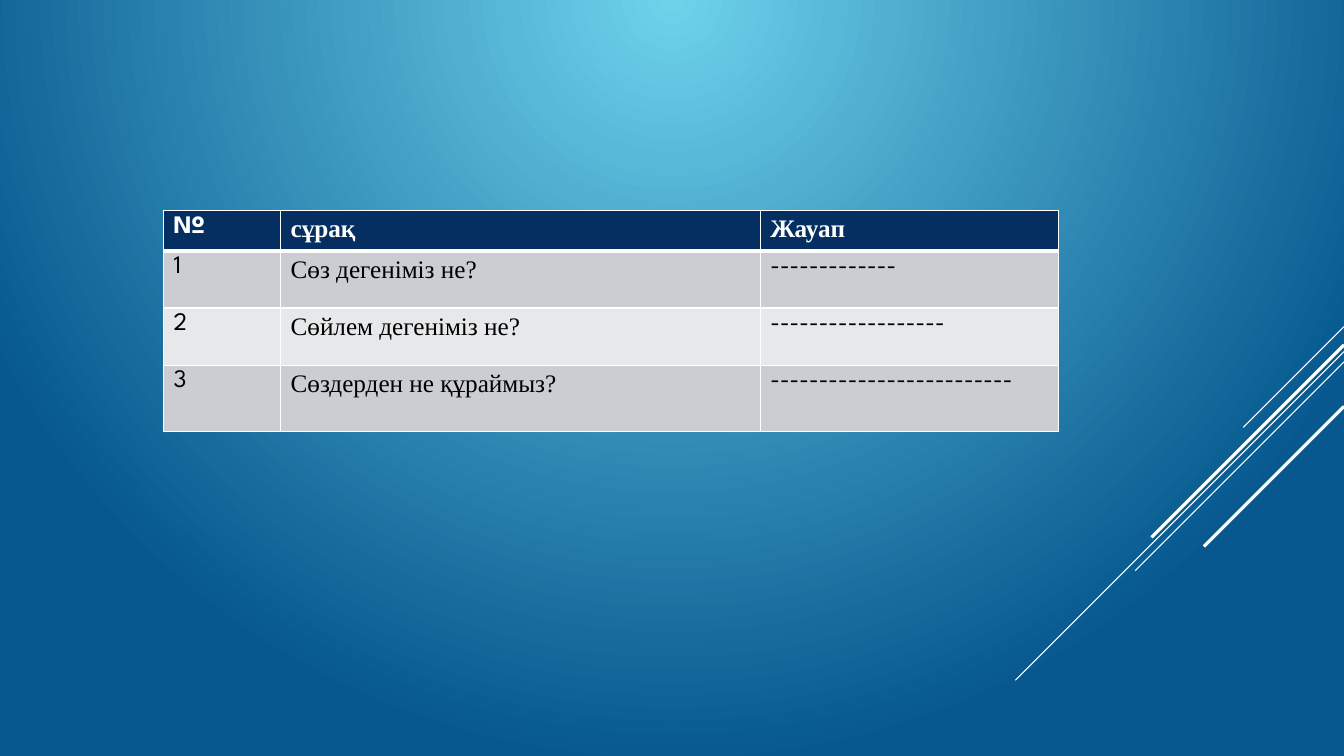
from dataclasses import dataclass

from lxml.etree import SubElement
from pptx import Presentation
from pptx.dml.color import RGBColor
from pptx.enum.shapes import MSO_CONNECTOR
from pptx.oxml.ns import qn
from pptx.util import Cm, Pt


@dataclass(frozen=True)
class Theme:
    glow: str = "6ED2EB"
    deep: str = "06588E"
    line: str = "FFFFFF"
    header_fill: str = "052F61"
    header_text: str = "FFFFFF"
    band_fills: tuple = ("CCCDD2", "E7E8EA")
    body_text: str = "000000"
    text_size: float = 18
    label_font: str = "League Spartan"
    text_font: str = "Times New Roman"
    thin: float = 0.75
    thick: float = 2.25
    grid: float = 1
    header_rule: float = 3


THEME = Theme()
SLIDE_W, SLIDE_H = 33.87, 19.05
COL_WIDTHS = (2.95, 12.09, 7.52)
ROW_HEIGHTS = (1.02, 1.44, 1.44, 1.67)
ROWS = (
    ("№", "сұрақ", "Жауап"),
    ("1", "Сөз дегеніміз не?", "-" * 13),
    ("2", "Сөйлем дегеніміз не?", "-" * 18),
    ("3", "Сөздерден не құраймыз?", "-" * 25),
)


def rgb(color):
    return RGBColor.from_string(color)


def paint_background(s):
    fill = s.background.fill
    fill.gradient()
    for stop, position, color in zip(fill.gradient_stops, (0, 1), (THEME.glow, THEME.deep)):
        stop.position = position
        stop.color.rgb = rgb(color)
    grad = next(s.element.iter(qn("a:gradFill")))
    grad.remove(grad.find(qn("a:lin")))
    circle = SubElement(grad, qn("a:path"), path="circle")
    SubElement(circle, qn("a:fillToRect"), l="50000", t="0", r="50000", b="100000")


def add_diagonals(s, right, top):
    strokes = (
        (0, 2.54, THEME.thin),
        (0.63, 8.28, THEME.thin),
        (0.89, 5.26, THEME.thin),
        (0.46, 4.85, THEME.thick),
        (2.01, 3.53, THEME.thick),
    )
    for drop, run, weight in strokes:
        y = top + drop
        line = s.shapes.add_connector(
            MSO_CONNECTOR.STRAIGHT, Cm(right), Cm(y), Cm(right - run), Cm(y + run))
        line.line.color.rgb = rgb(THEME.line)
        line.line.width = Pt(weight)
        SubElement(line.element.spPr, qn("a:effectLst"))


def set_borders(cell, row):
    tc_pr = cell._tc.get_or_add_tcPr()
    weights = {
        "L": THEME.grid,
        "R": THEME.grid,
        "T": THEME.header_rule if row == 1 else THEME.grid,
        "B": THEME.header_rule if row == 0 else THEME.grid,
    }
    for side, weight in weights.items():
        ln = SubElement(tc_pr, qn(f"a:ln{side}"), w=str(Pt(weight)))
        fill = SubElement(ln, qn("a:solidFill"))
        SubElement(fill, qn("a:srgbClr"), val=THEME.line)


def fill_cell(cell, text, row, font):
    header = row == 0
    set_borders(cell, row)
    cell.fill.solid()
    cell.fill.fore_color.rgb = rgb(
        THEME.header_fill if header else THEME.band_fills[(row - 1) % 2])
    r = cell.text_frame.paragraphs[0].add_run()
    r.text = text
    r.font.name = font
    r.font.size = Pt(THEME.text_size)
    r.font.bold = header
    r.font.color.rgb = rgb(THEME.header_text if header else THEME.body_text)


def add_question_table(s, left, top):
    table = s.shapes.add_table(
        len(ROWS), len(COL_WIDTHS), Cm(left), Cm(top),
        Cm(sum(COL_WIDTHS)), Cm(sum(ROW_HEIGHTS))).table
    for column, width in zip(table.columns, COL_WIDTHS):
        column.width = Cm(width)
    for i, (height, texts) in enumerate(zip(ROW_HEIGHTS, ROWS)):
        table.rows[i].height = Cm(height)
        for j, text in enumerate(texts):
            serif = j == 1 or (i == 0 and j == 2)
            font = THEME.text_font if serif else THEME.label_font
            fill_cell(table.cell(i, j), text, i, font)


def main():
    prs = Presentation()
    prs.slide_width, prs.slide_height = Cm(SLIDE_W), Cm(SLIDE_H)
    s = prs.slides.add_slide(prs.slide_layouts[6])
    paint_background(s)
    add_diagonals(s, SLIDE_W, 8.23)
    add_question_table(s, 4.12, 5.3)
    prs.save("out.pptx")


if __name__ == "__main__":
    main()
